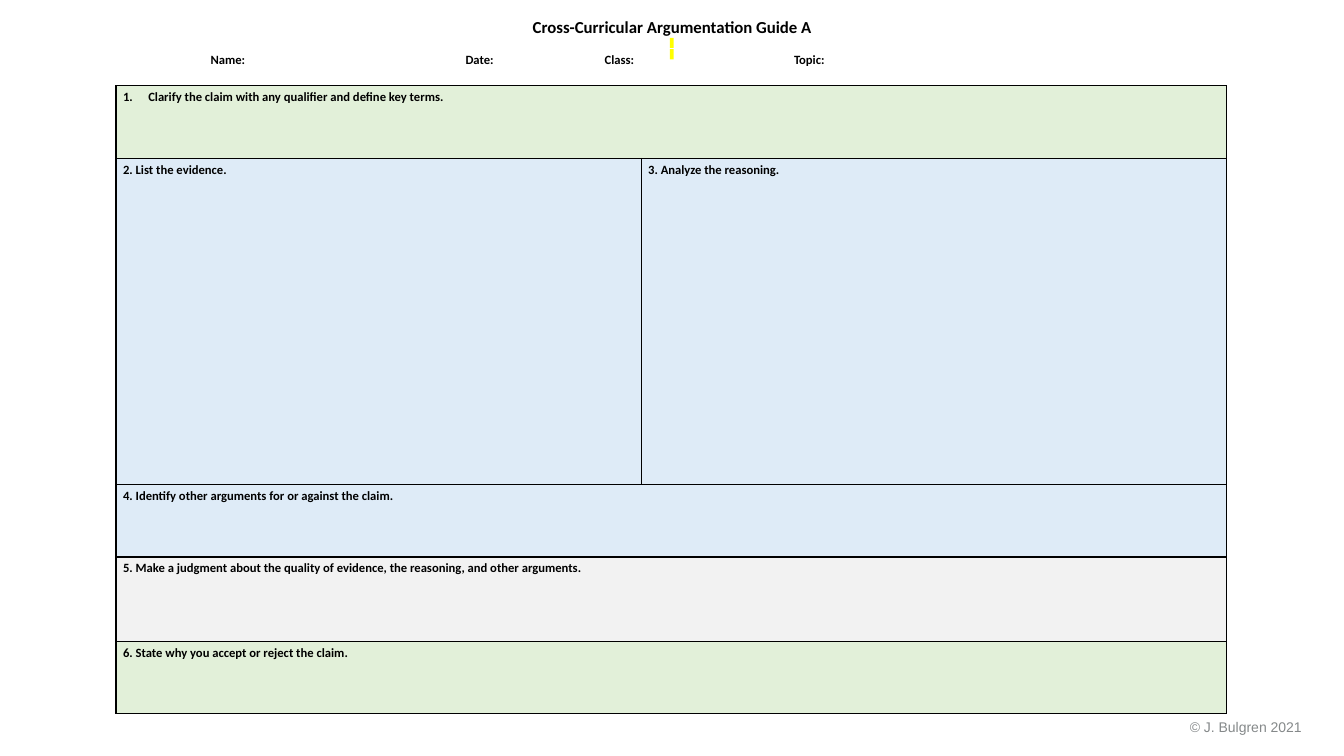
from dataclasses import dataclass

from lxml.etree import SubElement
from pptx import Presentation
from pptx.dml.color import RGBColor
from pptx.enum.shapes import MSO_SHAPE
from pptx.enum.text import MSO_ANCHOR, MSO_AUTO_SIZE, PP_ALIGN
from pptx.oxml.ns import qn
from pptx.util import Pt


@dataclass(frozen=True)
class Theme:
    """Colours, fonts and type sizes of the guide."""
    ink: str = "000000"
    green: str = "E2F0D9"
    blue: str = "DEEBF7"
    grey: str = "F2F2F2"
    mark: str = "FFFF00"
    credit: str = "85898A"
    body_font: str = "Calibri"
    credit_font: str = "Arial"
    title_size: float = 12
    label_size: float = 9
    credit_size: float = 10


THEME = Theme()
FIELDS = [("Name:", 182.16, 0), ("Date:", 84.96, 0),
          ("Class:", 108.72, 14.4), ("Topic:", 293.76, 41)]
STEPS = [
    (52.1, THEME.green, ["Clarify the claim with any qualifier and define key terms."]),
    (233, THEME.blue, ["2. List the evidence.", "3. Analyze the reasoning."]),
    (51.6, THEME.blue, ["4. Identify other arguments for or against the claim."]),
    (60.5, THEME.grey, ["5. Make a judgment about the quality of evidence, "
                        "the reasoning, and other arguments."]),
    (51.4, THEME.green, ["6. State why you accept or reject the claim."]),
]


def write_text(frame, text, size=THEME.label_size, color=THEME.ink,
               name=THEME.body_font, bold=True, align=PP_ALIGN.LEFT, numbered=False):
    """Write one formatted paragraph into a text frame."""
    frame.word_wrap = True
    para = frame.paragraphs[0]
    para.alignment = align
    para.line_spacing = 1.0
    if numbered:
        properties = para._p.get_or_add_pPr()
        properties.set("marL", str(Pt(18)))
        properties.set("indent", str(Pt(-18)))
        SubElement(properties, qn("a:buFont"), typeface="+mj-lt")
        SubElement(properties, qn("a:buAutoNum"), type="arabicPeriod")
    span = para.add_run()
    span.text = text
    span.font.size = Pt(size)
    span.font.name = name
    span.font.bold = bold
    span.font.color.rgb = RGBColor.from_string(color)


def add_grid(slide, left, top, widths, heights):
    """Add a plain table with the given column widths and row heights."""
    table = slide.shapes.add_table(len(heights), len(widths), Pt(left), Pt(top),
                                   Pt(sum(widths)), Pt(sum(heights))).table
    table.first_row = table.horz_banding = False
    for column, width in zip(table.columns, widths):
        column.width = Pt(width)
    for row, height in zip(table.rows, heights):
        row.height = Pt(height)
    return table


def set_margins(cell, indent=0):
    """Set the cell margins, with an optional extra left indent."""
    cell.margin_left = Pt(5 + indent)
    cell.margin_right = Pt(5)
    cell.margin_top = cell.margin_bottom = Pt(2.9)


def add_borders(cell):
    """Draw a one-point line on each side of a cell."""
    properties = cell._tc.get_or_add_tcPr()
    for side in ("a:lnL", "a:lnR", "a:lnT", "a:lnB"):
        line = SubElement(properties, qn(side), w=str(Pt(1)))
        fill = SubElement(line, qn("a:solidFill"))
        SubElement(fill, qn("a:srgbClr"), val=THEME.ink)


def add_title(slide, text):
    """Place and format the title."""
    title = slide.shapes.title
    title.left, title.top, title.width, title.height = Pt(223.9), Pt(8.6), Pt(512.6), Pt(51)
    title.text_frame.auto_size = MSO_AUTO_SIZE.NONE
    title.text_frame.vertical_anchor = MSO_ANCHOR.TOP
    write_text(title.text_frame, text, size=THEME.title_size, align=PP_ALIGN.CENTER)


def add_mark(slide):
    """Add the narrow yellow mark below the title."""
    mark = slide.shapes.add_shape(MSO_SHAPE.RECTANGLE, Pt(478.4), Pt(27), Pt(2.8), Pt(15.5))
    mark.shadow.inherit = False
    mark.fill.solid()
    mark.fill.fore_color.rgb = RGBColor.from_string(THEME.mark)
    mark.line.fill.background()


def add_fields(slide):
    """Add the row of labels for the student to fill in."""
    table = add_grid(slide, 145.4, 34.6, [width for _, width, _ in FIELDS], [27])
    for cell, (label, _, indent) in zip(table.rows[0].cells, FIELDS):
        cell.fill.background()
        set_margins(cell, indent)
        write_text(cell.text_frame, label)


def add_steps(slide):
    """Add the bordered table of argumentation steps."""
    table = add_grid(slide, 82.9, 61.2, [375.1, 418.3], [height for height, _, _ in STEPS])
    for row_index, (_, color, labels) in enumerate(STEPS):
        cells = list(table.rows[row_index].cells)
        for cell in cells:
            add_borders(cell)
            cell.fill.solid()
            cell.fill.fore_color.rgb = RGBColor.from_string(color)
            set_margins(cell)
        if len(labels) == 1:
            cells[0].merge(cells[-1])
        for cell, label in zip(cells, labels):
            write_text(cell.text_frame, label, numbered=row_index == 0)


def add_credit(slide, text):
    """Add the copyright line at the lower right."""
    box = slide.shapes.add_textbox(Pt(837.4), Pt(509.8), Pt(99.4), Pt(21.6))
    write_text(box.text_frame, text, size=THEME.credit_size, color=THEME.credit,
               name=THEME.credit_font, bold=False, align=PP_ALIGN.RIGHT)


def main():
    """Build and save the guide."""
    deck = Presentation()
    deck.slide_width, deck.slide_height = Pt(960), Pt(540)
    slide = deck.slides.add_slide(deck.slide_layouts[5])
    add_title(slide, "Cross-Curricular Argumentation Guide A")
    add_mark(slide)
    add_fields(slide)
    add_steps(slide)
    add_credit(slide, "© J. Bulgren 2021")
    deck.save("out.pptx")


if __name__ == "__main__":
    main()
